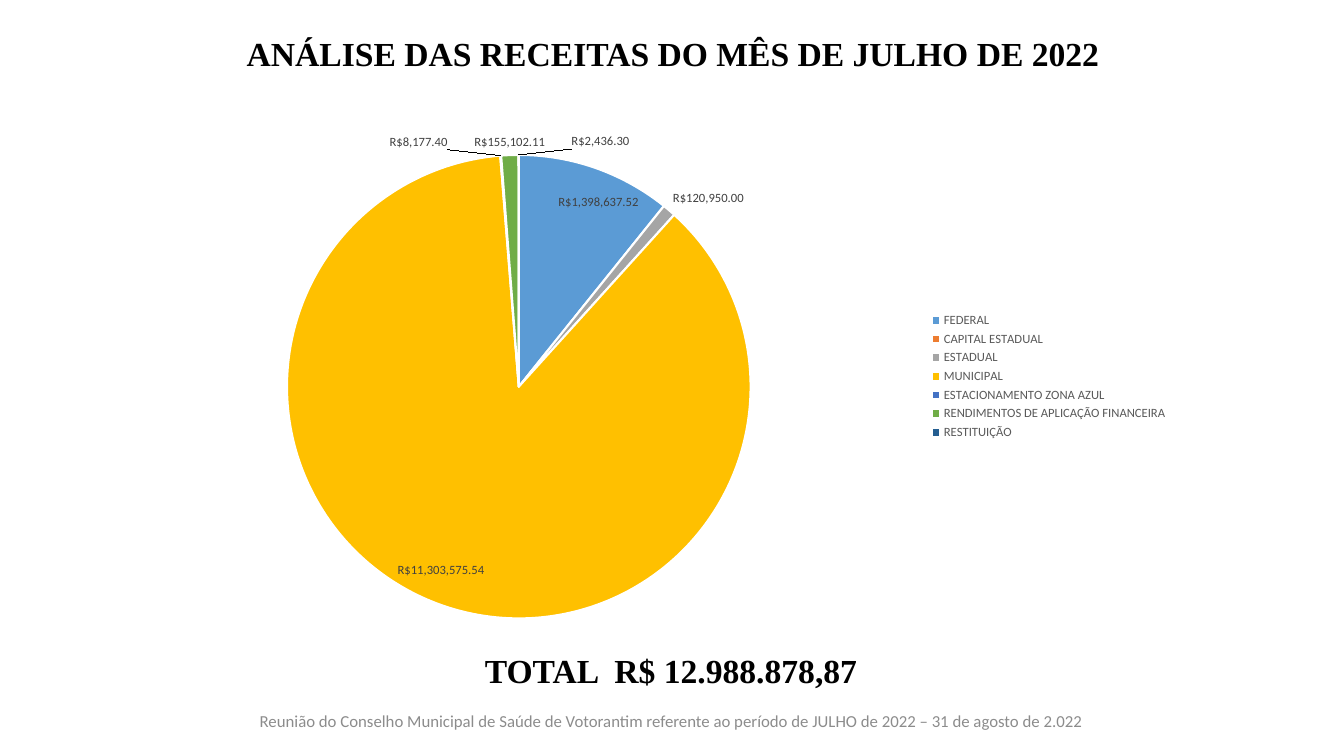
from dataclasses import dataclass

from lxml.etree import SubElement
from pptx import Presentation
from pptx.chart.data import CategoryChartData
from pptx.dml.color import RGBColor
from pptx.enum.chart import XL_CHART_TYPE as ChartType
from pptx.enum.chart import XL_LABEL_POSITION as LabelPosition
from pptx.enum.chart import XL_LEGEND_POSITION as LegendPosition
from pptx.enum.text import MSO_ANCHOR as Anchor
from pptx.enum.text import PP_ALIGN as Align
from pptx.oxml import parse_xml
from pptx.oxml.ns import nsdecls, qn
from pptx.util import Inches, Pt


@dataclass(frozen=True)
class Theme:
    heading_font: str = "Times New Roman"
    body_font: str = "Calibri"
    heading_size: int = 24
    footer_size: int = 12
    chart_size: int = 9
    black: str = "000000"
    white: str = "FFFFFF"
    footer: str = "8C8C8C"
    legend: str = "595959"
    label: str = "404040"


THEME = Theme()

# Source of revenue, amount in reais, slice colour
REVENUES = [
    ("FEDERAL", 1398637.52, "5B9BD5"),
    ("CAPITAL ESTADUAL", 0, "ED7D31"),
    ("ESTADUAL", 120950.00, "A5A5A5"),
    ("MUNICIPAL", 11303575.54, "FFC000"),
    ("ESTACIONAMENTO ZONA AZUL", 8177.40, "4472C4"),
    ("RENDIMENTOS DE APLICAÇÃO FINANCEIRA", 155102.11, "70AD47"),
    ("RESTITUIÇÃO", 2436.30, "255E91"),
]
# Shift of crowded labels, as a share of the chart's width and height
LABEL_SHIFTS = {4: (-0.08, 0), 6: (0.08, 0)}
NUMBER_FORMAT = '"R$"#,##0.00;;'


def style_font(font, size, color, name, bold=False):
    font.size = Pt(size)
    font.name = name
    font.bold = bold
    font.color.rgb = RGBColor.from_string(color)


def add_text(slide, text, box, *, size, color, font, bold=False,
             align=Align.LEFT, anchor=Anchor.TOP):
    shape = slide.shapes.add_textbox(*map(Inches, box))
    frame = shape.text_frame
    frame.word_wrap = True
    frame.vertical_anchor = anchor
    paragraph = frame.paragraphs[0]
    paragraph.alignment = align
    run = paragraph.add_run()
    run.text = text
    style_font(run.font, size, color, font, bold)


def manual_layout(**settings):
    layout = parse_xml(f"<c:layout {nsdecls('c')}/>")
    manual = SubElement(layout, qn("c:manualLayout"))
    for name, value in settings.items():
        SubElement(manual, qn(f"c:{name}")).set("val", str(value))
    return layout


def place_plot(chart, x, y, w, h):
    area = chart._chartSpace.chart.plotArea
    for layout in area.findall(qn("c:layout")):
        area.remove(layout)
    area.insert(0, manual_layout(layoutTarget="inner", xMode="edge",
                                 yMode="edge", x=x, y=y, w=w, h=h))


def shift_label(labels, index, x, y):
    """Move one value label away from its automatic place."""
    label = labels._element._insert_dLbl_in_sequence(index)
    label.find(qn("c:idx")).addnext(manual_layout(x=x, y=y))
    for name, shown in (("showLegendKey", 0), ("showVal", 1),
                        ("showCatName", 0), ("showSerName", 0),
                        ("showPercent", 0)):
        label.find(qn(f"c:{name}")).set("val", str(shown))


def add_labels(series):
    labels = series.data_labels
    labels.show_value = True
    labels.show_percentage = False
    labels.number_format = NUMBER_FORMAT
    labels.number_format_is_linked = False
    labels.position = LabelPosition.BEST_FIT
    style_font(labels.font, THEME.chart_size, THEME.label, THEME.body_font)
    for index, (x, y) in LABEL_SHIFTS.items():
        shift_label(labels, index, x, y)
        label = series.points[index].data_label
        label.position = LabelPosition.BEST_FIT
        style_font(label.font, THEME.chart_size, THEME.label, THEME.body_font)
    leader = labels._element.find(qn("c:showLeaderLines"))
    if leader is None:
        leader = SubElement(labels._element, qn("c:showLeaderLines"))
    leader.set("val", "1")


def add_revenue_pie(slide, box):
    names, amounts, colors = zip(*REVENUES)
    data = CategoryChartData(number_format=NUMBER_FORMAT)
    data.categories = names
    data.add_series("Series 1", amounts)
    chart = slide.shapes.add_chart(
        ChartType.PIE, *map(Inches, box), data).chart
    chart.has_title = False
    style_font(chart.font, THEME.chart_size, THEME.black, THEME.body_font)
    chart.has_legend = True
    chart.legend.position = LegendPosition.RIGHT
    chart.legend.include_in_layout = False
    style_font(chart.legend.font, THEME.chart_size, THEME.legend,
               THEME.body_font)
    plot = chart.plots[0]
    plot.vary_by_categories = True
    series = plot.series[0]
    for index, color in enumerate(colors):
        slice_format = series.points[index].format
        slice_format.fill.solid()
        slice_format.fill.fore_color.rgb = RGBColor.from_string(color)
        slice_format.line.width = Pt(1.5)
        slice_format.line.color.rgb = RGBColor.from_string(THEME.white)
    add_labels(series)
    place_plot(chart, x=0.12, y=0.07, w=0.47, h=0.9)


def main():
    presentation = Presentation()
    presentation.slide_width = Inches(13.33)
    presentation.slide_height = Inches(7.5)
    slide = presentation.slides.add_slide(presentation.slide_layouts[6])
    heading = dict(size=THEME.heading_size, color=THEME.black,
                   font=THEME.heading_font, bold=True)
    add_text(slide, "ANÁLISE DAS RECEITAS DO MÊS DE JULHO DE 2022",
             (1.66, 0.28, 10.03, 0.5), align=Align.CENTER, **heading)
    add_text(slide, "TOTAL  R$ 12.988.878,87",
             (4.71, 6.4, 4.02, 0.5), **heading)
    add_text(slide, "Reunião do Conselho Municipal de Saúde de Votorantim "
             "referente ao período de JULHO de 2022 – 31 de agosto de 2.022",
             (2.29, 6.95, 8.74, 0.4), size=THEME.footer_size,
             color=THEME.footer, font=THEME.body_font,
             align=Align.CENTER, anchor=Anchor.MIDDLE)
    add_revenue_pie(slide, (1.55, 1.18, 10.13, 5.11))
    presentation.save("out.pptx")


if __name__ == "__main__":
    main()
